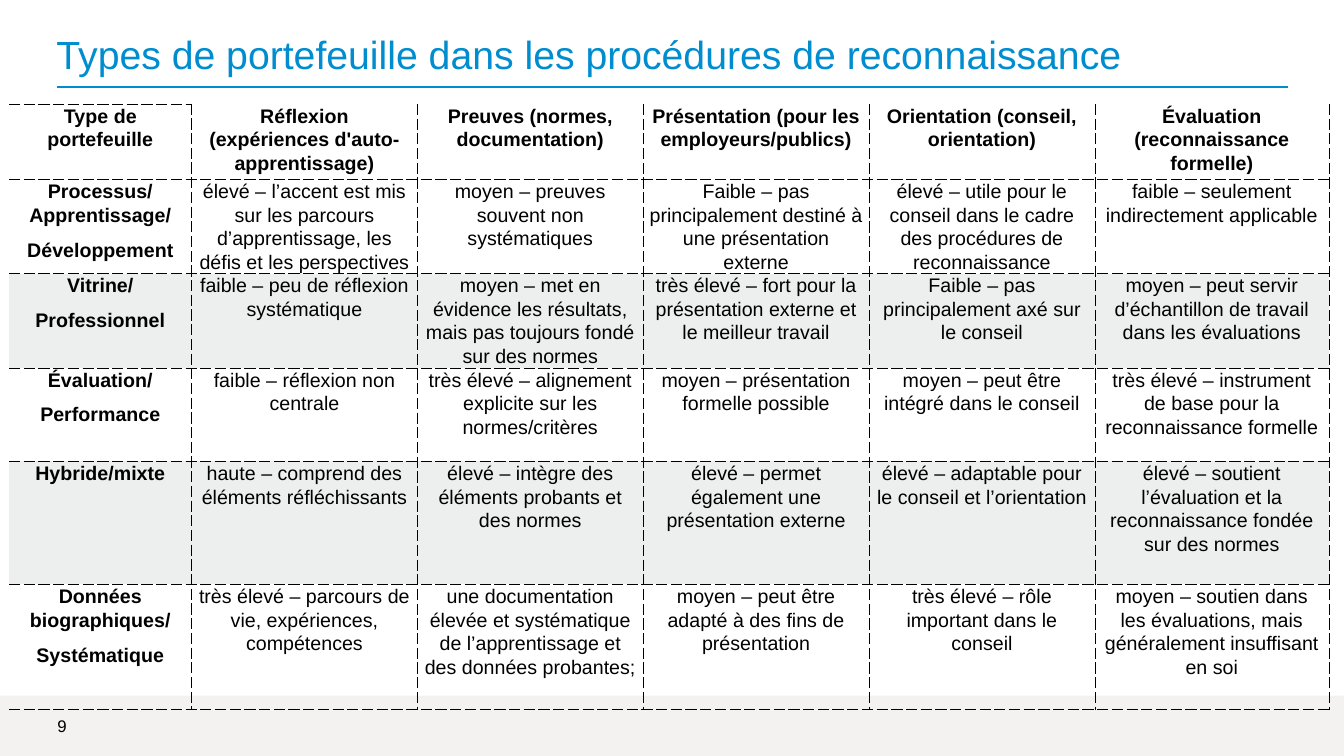
from dataclasses import dataclass

from lxml.etree import SubElement
from pptx import Presentation
from pptx.dml.color import RGBColor
from pptx.enum.shapes import MSO_CONNECTOR, MSO_SHAPE
from pptx.enum.text import MSO_ANCHOR, MSO_AUTO_SIZE, PP_ALIGN
from pptx.oxml.ns import qn
from pptx.util import Emu, Pt

EMU_PER_PX = 9144
FONT = "Arial"
BLUE = RGBColor(0x00, 0x8D, 0xD0)
BLACK = RGBColor(0x00, 0x00, 0x00)
BAND = RGBColor(0xED, 0xEE, 0xEE)
FOOTER = RGBColor(0x8A, 0x86, 0x7A)
FOOTER_ALPHA = 10000
BORDER_WIDTH = Pt(0.25)
COLUMN_WIDTHS = (181, 224, 224, 224, 224, 232)
HEADERS = (
    "Type de portefeuille",
    "Réflexion (expériences d'auto-apprentissage)",
    "Preuves (normes, documentation)",
    "Présentation (pour les employeurs/publics)",
    "Orientation (conseil, orientation)",
    "Évaluation (reconnaissance formelle)",
)


@dataclass(frozen=True)
class TableRow:
    height: int
    label: tuple[str, ...]
    ratings: tuple[str, ...]
    banded: bool = False
    header: bool = False


ROWS = (
    TableRow(75, HEADERS[:1], HEADERS[1:], header=True),
    TableRow(93, ("Processus/Apprentissage/", "Développement"), (
        "élevé – l’accent est mis sur les parcours d’apprentissage, les défis et les perspectives",
        "moyen – preuves souvent non systématiques",
        "Faible – pas principalement destiné à une présentation externe",
        "élevé – utile pour le conseil dans le cadre des procédures de reconnaissance",
        "faible – seulement indirectement applicable",
    )),
    TableRow(93, ("Vitrine/", "Professionnel"), (
        "faible – peu de réflexion systématique",
        "moyen – met en évidence les résultats, mais pas toujours fondé sur des normes",
        "très élevé – fort pour la présentation externe et le meilleur travail",
        "Faible – pas principalement axé sur le conseil",
        "moyen – peut servir d’échantillon de travail dans les évaluations",
    ), banded=True),
    TableRow(93, ("Évaluation/", "Performance"), (
        "faible – réflexion non centrale",
        "très élevé – alignement explicite sur les normes/critères",
        "moyen – présentation formelle possible",
        "moyen – peut être intégré dans le conseil",
        "très élevé – instrument de base pour la reconnaissance formelle",
    )),
    TableRow(122, ("Hybride/mixte",), (
        "haute – comprend des éléments réfléchissants",
        "élevé – intègre des éléments probants et des normes",
        "élevé – permet également une présentation externe",
        "élevé – adaptable pour le conseil et l’orientation",
        "élevé – soutient l’évaluation et la reconnaissance fondée sur des normes",
    ), banded=True),
    TableRow(124, ("Données biographiques/", "Systématique"), (
        "très élevé – parcours de vie, expériences, compétences",
        "une documentation élevée et systématique de l’apprentissage et des données probantes;",
        "moyen – peut être adapté à des fins de présentation",
        "très élevé – rôle important dans le conseil",
        "moyen – soutien dans les évaluations, mais généralement insuffisant en soi",
    )),
)


def px(length: int) -> Emu:
    return Emu(length * EMU_PER_PX)


def add_span(para, text: str, size: int, color: RGBColor, bold: bool = False) -> None:
    span = para.add_run()
    span.text = text
    span.font.name = FONT
    span.font.size = Pt(size)
    span.font.bold = bold
    span.font.color.rgb = color


def fill_line_box(box, text: str, size: int, color: RGBColor) -> None:
    frame = box.text_frame
    frame.auto_size = MSO_AUTO_SIZE.NONE
    frame.word_wrap = True
    frame.vertical_anchor = MSO_ANCHOR.MIDDLE
    frame.margin_left = frame.margin_right = frame.margin_top = frame.margin_bottom = 0
    para = frame.paragraphs[0]
    para.alignment = PP_ALIGN.LEFT
    add_span(para, text, size, color)


def set_borders(cell, visible: dict[str, bool]) -> None:
    properties = cell._tc.get_or_add_tcPr()
    for side, shown in visible.items():
        line = SubElement(properties, qn(f"a:ln{side}"), w=str(int(BORDER_WIDTH)))
        if shown:
            fill = SubElement(line, qn("a:solidFill"))
            SubElement(fill, qn("a:srgbClr"), val=str(BLACK))
            SubElement(line, qn("a:prstDash"), val="dash")
        else:
            SubElement(line, qn("a:noFill"))


def fill_cell(cell, texts: tuple[str, ...], bold: bool) -> None:
    cell.margin_left = cell.margin_right = px(6)
    cell.margin_top = cell.margin_bottom = 0
    cell.vertical_anchor = MSO_ANCHOR.TOP
    frame = cell.text_frame
    for index, text in enumerate(texts):
        para = frame.add_paragraph() if index else frame.paragraphs[0]
        para.alignment = PP_ALIGN.CENTER
        para.line_spacing = 1.07
        para.space_after = Pt(8)
        add_span(para, text, 14, BLACK, bold)


def add_portfolio_table(page) -> None:
    table = page.shapes.add_table(
        len(ROWS), len(COLUMN_WIDTHS), px(9), px(103),
        px(sum(COLUMN_WIDTHS)), px(sum(row.height for row in ROWS)),
    ).table
    table.first_row = False
    table.horz_banding = False
    for column, width in zip(table.columns, COLUMN_WIDTHS):
        column.width = px(width)
    for row_index, row in enumerate(ROWS):
        table.rows[row_index].height = px(row.height)
        for column_index, texts in enumerate((row.label, *((text,) for text in row.ratings))):
            cell = table.cell(row_index, column_index)
            first = column_index == 0
            fill_cell(cell, texts, row.header or first)
            set_borders(cell, {"L": not first, "R": True, "T": first or not row.header, "B": True})
            if row.banded:
                cell.fill.solid()
                cell.fill.fore_color.rgb = BAND
            else:
                cell.fill.background()


def add_title_rule(page) -> None:
    rule = page.shapes.add_connector(MSO_CONNECTOR.STRAIGHT, px(57), px(86), px(1277), px(86))
    rule.line.color.rgb = BLUE
    rule.line.width = Pt(1.25)
    SubElement(rule._element.spPr, qn("a:effectLst"))


def add_footer_band(page) -> None:
    band = page.shapes.add_shape(MSO_SHAPE.RECTANGLE, 0, px(690), px(1335), px(61))
    band.shadow.inherit = False
    band.line.fill.background()
    band.fill.solid()
    band.fill.fore_color.rgb = FOOTER
    color = band._element.spPr.find(qn("a:solidFill")).find(qn("a:srgbClr"))
    SubElement(color, qn("a:alpha"), val=str(FOOTER_ALPHA))


def main() -> None:
    deck = Presentation()
    deck.slide_width, deck.slide_height = px(1333), px(750)
    page = deck.slides.add_slide(deck.slide_layouts[5])
    add_title_rule(page)
    add_footer_band(page)
    title = page.shapes.title
    title.left, title.top, title.width, title.height = px(56), px(28), px(1150), px(51)
    fill_line_box(title, "Types de portefeuille dans les procédures de reconnaissance", 28, BLUE)
    number = page.shapes.add_textbox(px(57), px(704), px(60), px(32))
    fill_line_box(number, "9", 12, BLACK)
    add_portfolio_table(page)
    deck.save("out.pptx")


if __name__ == "__main__":
    main()
